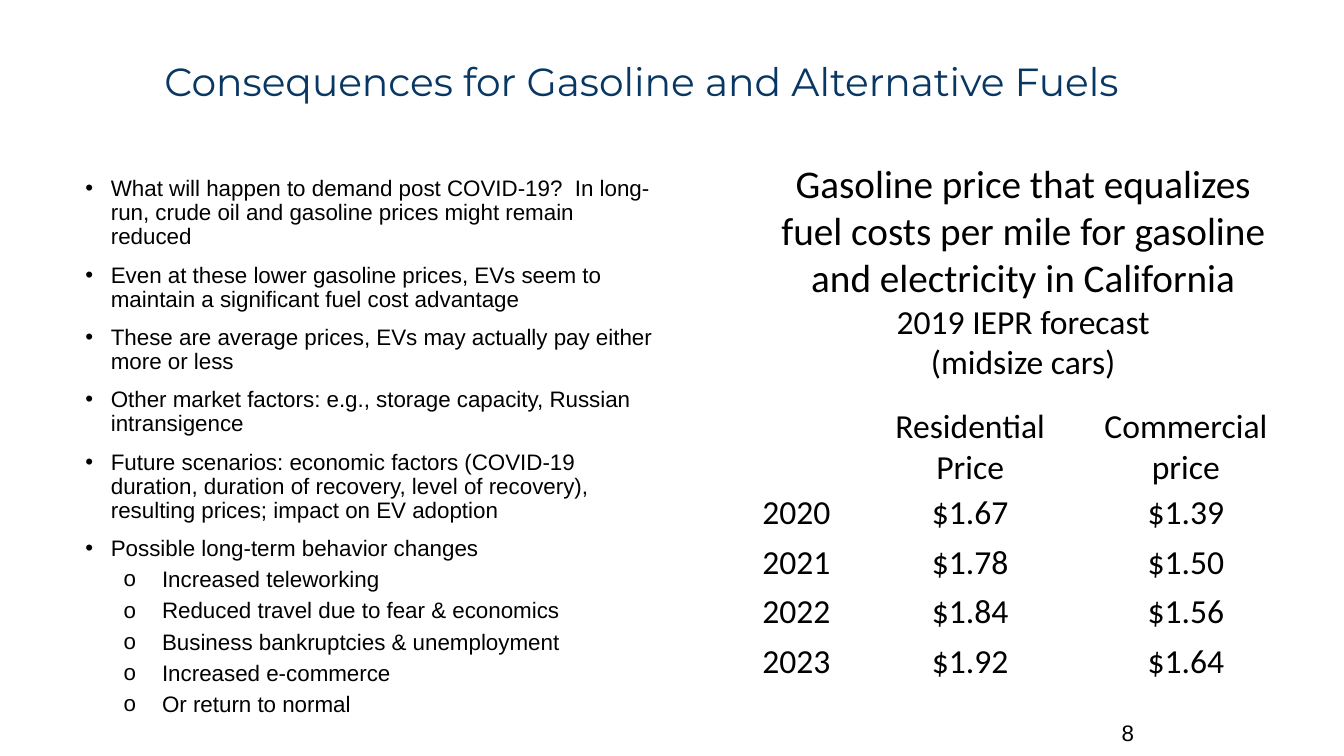
from lxml import etree
from pptx import Presentation
from pptx import util as u
from pptx.dml.color import RGBColor
from pptx.enum import text
from pptx.oxml import ns

COLORS = {"navy": "083763", "black": "000000"}
LEFT, CENTER, RIGHT = text.PP_ALIGN.LEFT, text.PP_ALIGN.CENTER, text.PP_ALIGN.RIGHT

TITLE = "Consequences for Gasoline and Alternative Fuels"
TOPICS = [
    "What will happen to demand post COVID-19?  In long-run, crude oil and gasoline prices might remain reduced",
    "Even at these lower gasoline prices, EVs seem to maintain a significant fuel cost advantage",
    "These are average prices, EVs may actually pay either more or less",
    "Other market factors: e.g., storage capacity, Russian intransigence",
    "Future scenarios: economic factors (COVID-19 duration, duration of recovery, level of recovery), "
    "resulting prices; impact on EV adoption",
    "Possible long-term behavior changes",
]
CHANGES = [
    "Increased teleworking",
    "Reduced travel due to fear & economics",
    "Business bankruptcies & unemployment",
    "Increased e-commerce",
    "Or return to normal",
]
HEADING = [
    ("Gasoline price that equalizes fuel costs per mile for gasoline and electricity in California", 28),
    ("2019 IEPR forecast", 24),
    ("(midsize cars)", 24),
]
PRICES = [
    ("", "Residential\nPrice", "Commercial price"),
    ("2020", "$1.67", "$1.39"),
    ("2021", "$1.78", "$1.50"),
    ("2022", "$1.84", "$1.56"),
    ("2023", "$1.92", "$1.64"),
]


class FuelSlide:
    bullets = [
        {"char": "•", "margin": 0.64, "hanging": 0.64, "before": 10},
        {"char": "o", "margin": 1.93, "hanging": 0.97, "before": 5},
    ]

    def __init__(self, deck):
        self.slide = deck.slides.add_slide(deck.slide_layouts[1])

    def place(self, shape, left, top, width, height):
        shape.left, shape.top = u.Cm(left), u.Cm(top)
        shape.width, shape.height = u.Cm(width), u.Cm(height)

    def add_lines(self, frame, lines, font, align, color="black"):
        for index, (words, size) in enumerate(lines):
            paragraph = frame.paragraphs[0] if index == 0 else frame.add_paragraph()
            paragraph.alignment = align
            run = paragraph.add_run()
            run.text = words
            run.font.size = u.Pt(size)
            run.font.name = font
            run.font.color.rgb = RGBColor.from_string(COLORS[color])

    def title(self, words, *box):
        title = self.slide.shapes.title
        self.place(title, *box)
        frame = title.text_frame
        frame.auto_size = text.MSO_AUTO_SIZE.NONE
        frame.vertical_anchor = text.MSO_ANCHOR.MIDDLE
        self.add_lines(frame, [(words, 28)], "Montserrat", LEFT, "navy")
        frame.paragraphs[0].line_spacing = 0.9

    def outline(self, items, *box):
        body = self.slide.placeholders[1]
        self.place(body, *box)
        frame = body.text_frame
        frame.auto_size = text.MSO_AUTO_SIZE.NONE
        self.add_lines(frame, [(words, 16) for words, _ in items], "Arial", LEFT)
        for index, (paragraph, (_, level)) in enumerate(zip(frame.paragraphs, items)):
            bullet = self.bullets[level]
            paragraph.level = level
            paragraph.line_spacing = 0.9
            paragraph.space_before = u.Pt(bullet["before"] if index else 0)
            properties = paragraph._p.get_or_add_pPr()
            properties.set("marL", str(u.Cm(bullet["margin"])))
            properties.set("indent", str(-u.Cm(bullet["hanging"])))
            etree.SubElement(properties, ns.qn("a:buFont"), typeface="Arial")
            etree.SubElement(properties, ns.qn("a:buChar"), char=bullet["char"])

    def textbox(self, lines, font, align, anchor, *box):
        frame = self.slide.shapes.add_textbox(*map(u.Cm, box)).text_frame
        frame.word_wrap = True
        frame.vertical_anchor = anchor
        self.add_lines(frame, lines, font, align)

    def table(self, rows, widths, heights, left, top):
        table = self.slide.shapes.add_table(
            len(rows), len(widths), u.Cm(left), u.Cm(top), u.Cm(sum(widths)), u.Cm(sum(heights))
        ).table
        table.first_row = table.horz_banding = False
        for column, width in zip(table.columns, widths):
            column.width = u.Cm(width)
        for row, height, values in zip(table.rows, heights, rows):
            row.height = u.Cm(height)
            for index, (cell, value) in enumerate(zip(row.cells, values)):
                cell.fill.background()
                cell.vertical_anchor = text.MSO_ANCHOR.MIDDLE
                cell.margin_left = cell.margin_right = cell.margin_top = u.Cm(0.03)
                cell.margin_bottom = 0
                if value:
                    lines = [(line, 24) for line in value.split("\n")]
                    self.add_lines(cell.text_frame, lines, "Calibri", CENTER if index else LEFT)


def main():
    deck = Presentation()
    deck.slide_width, deck.slide_height = u.Cm(33.87), u.Cm(19.05)
    slide = FuelSlide(deck)
    slide.title(TITLE, 3.89, 0.66, 27.66, 2.9)
    items = [(topic, 0) for topic in TOPICS] + [(change, 1) for change in CHANGES]
    slide.outline(items, 1.9, 4.34, 14.96, 12.93)
    slide.textbox(HEADING, "Calibri", CENTER, text.MSO_ANCHOR.TOP, 19.18, 3.89, 13.21, 6.5)
    slide.table(PRICES, [2.64, 5.26, 5.61], [2.08] + [1.25] * 4, 19.18, 10.21)
    slide.textbox([("8", 16)], "Arial", RIGHT, text.MSO_ANCHOR.MIDDLE, 23.93, 17.96, 4.9, 1.02)
    deck.save("out.pptx")


if __name__ == "__main__":
    main()
